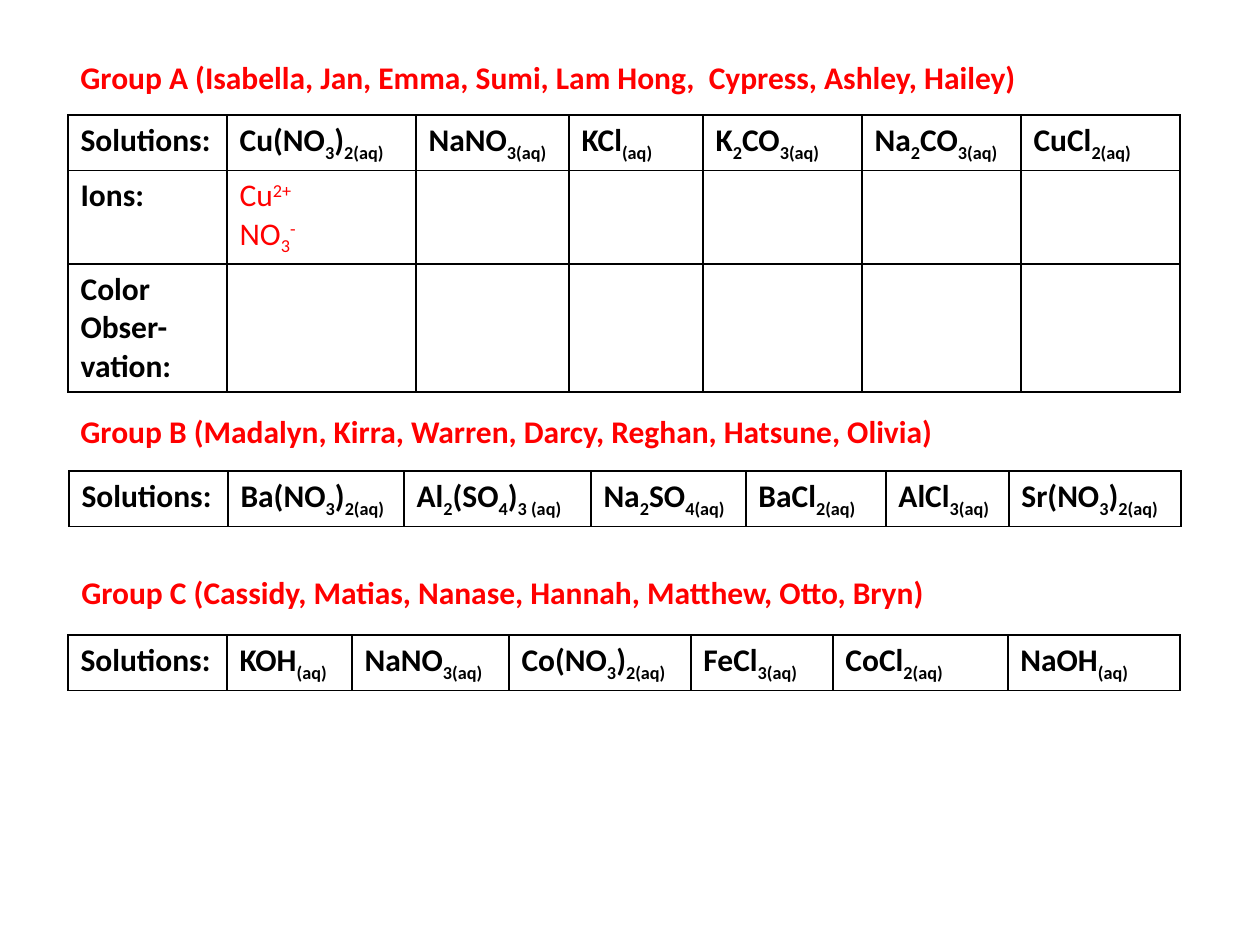
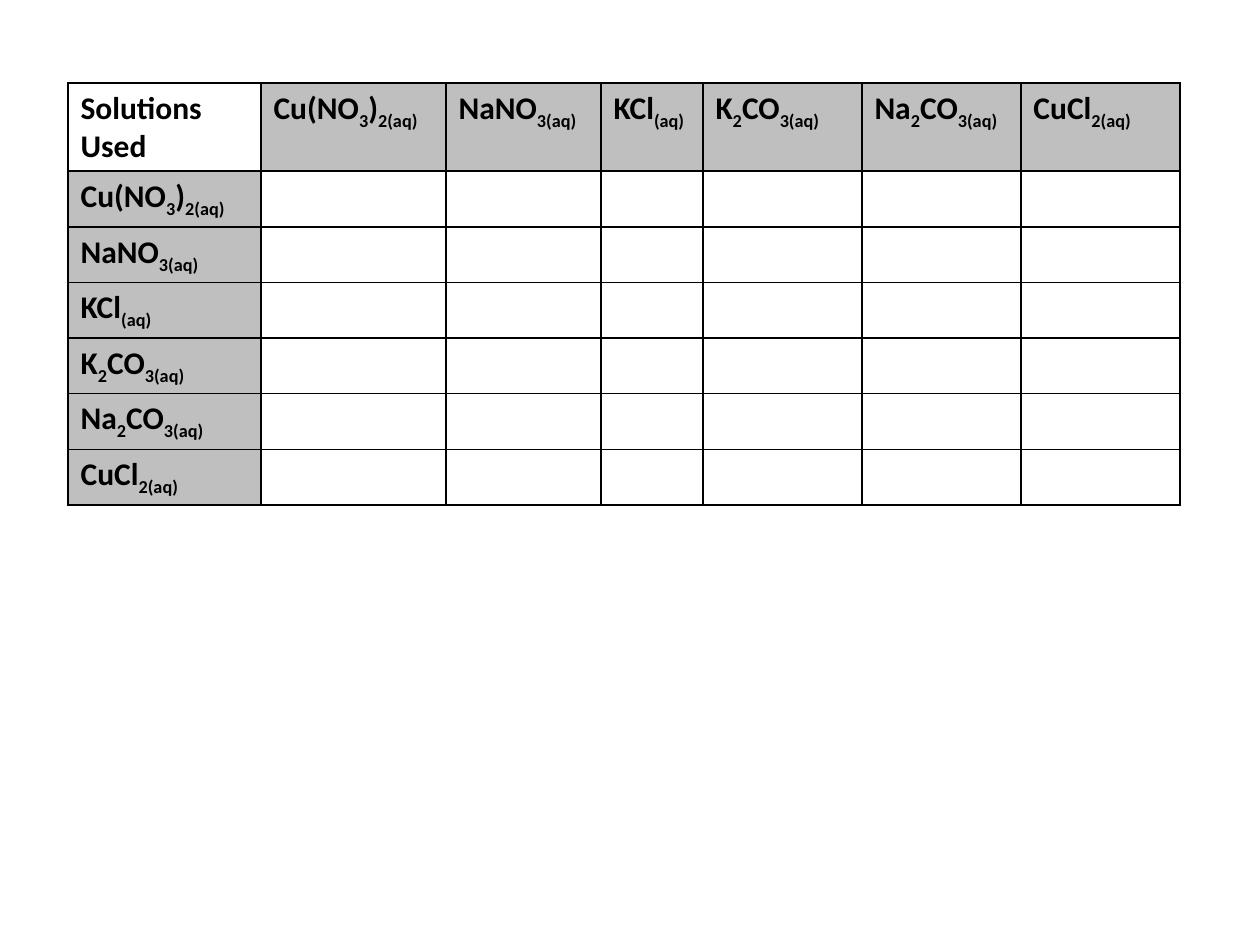
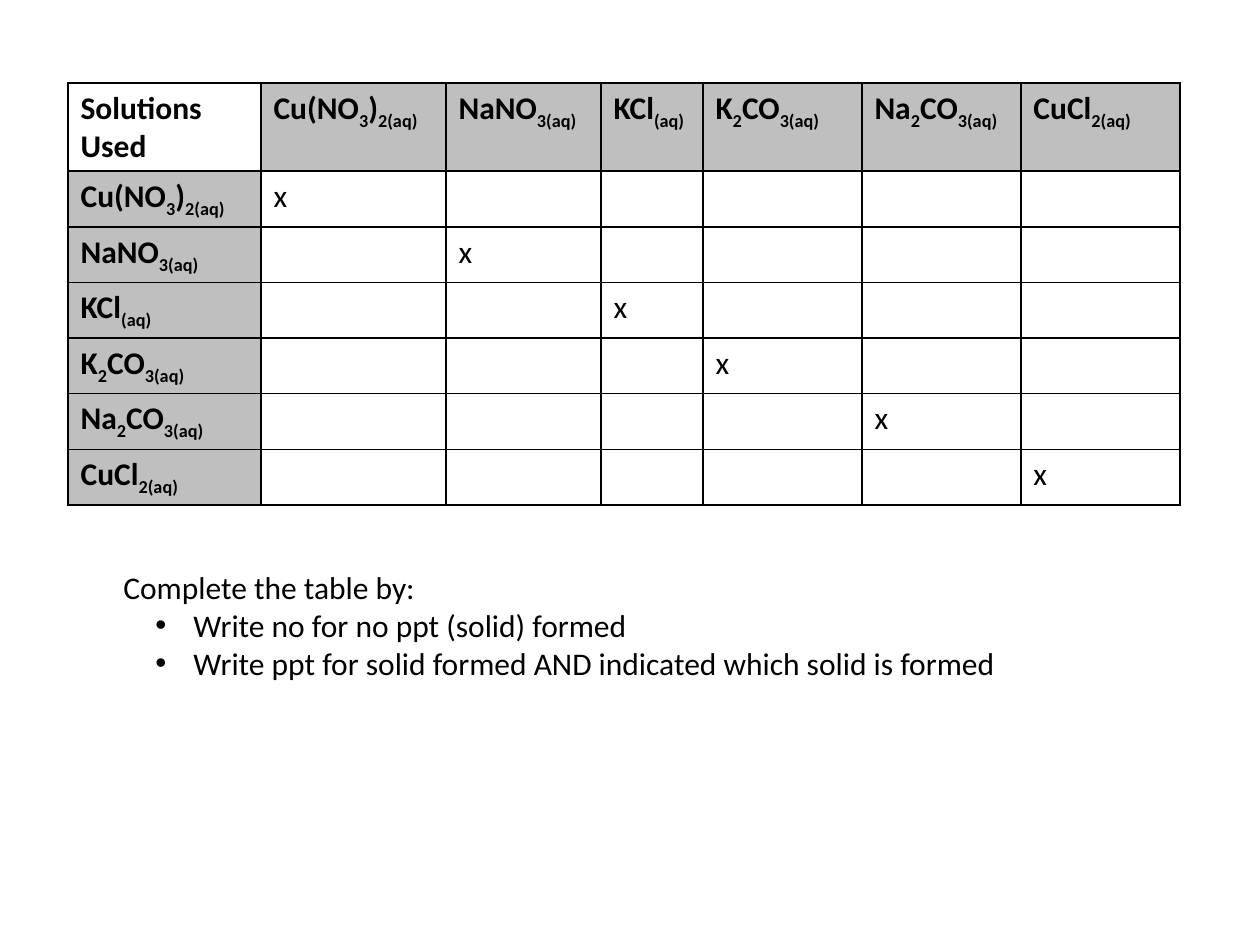
from dataclasses import dataclass

from lxml.etree import SubElement as Sub
from pptx import Presentation as Deck
from pptx.dml.color import RGBColor as Rgb
from pptx.enum.text import MSO_AUTO_SIZE as Fit
from pptx.oxml.ns import qn
from pptx.util import Emu, Pt

SCALE = 914400 / 126  # EMU in one px


def px(size):
    return Emu(round(size * SCALE))


@dataclass(frozen=True)
class Theme:
    face: str = "Calibri"
    size: int = 18
    ink: str = "000000"
    red: str = "FF0000"
    gray: str = "BFBFBF"
    white: str = "FFFFFF"
    rule: int = 1
    sub: int = -25
    sup: int = 30


class Page:
    """Holds the theme and the current slide."""

    def __init__(self, deck, theme):
        self.deck, self.theme, self.slide = deck, theme, None

    def new(self):
        self.slide = self.deck.slides.add_slide(self.deck.slide_layouts[6])

    def runs(self, para, text, color=None, bold=False):
        """Adds runs: _x_ is lowered, ^x^ is raised."""
        look = self.theme
        form = {"name": look.face, "size": Pt(look.size), "bold": bold}
        for low, part in enumerate(text.split("_")):
            for high, bit in enumerate(part.split("^")):
                if not bit:
                    continue
                run = para.add_run()
                run.text = bit
                for key, value in form.items():
                    setattr(run.font, key, value)
                run.font.color.rgb = Rgb.from_string(color or look.ink)
                shift = look.sup if high % 2 else look.sub if low % 2 else 0
                if shift:
                    run._r.get_or_add_rPr().set("baseline", str(shift * 1000))

    def fill(self, frame, text, **form):
        for num, line in enumerate(text.split("\n")):
            para = frame.add_paragraph() if num else frame.paragraphs[0]
            self.runs(para, line, **form)

    def text(self, box, text, **form):
        frame = self.slide.shapes.add_textbox(*map(px, box)).text_frame
        frame.word_wrap = True
        frame.auto_size = Fit.SHAPE_TO_FIT_TEXT
        self.fill(frame, text, **form)
        return frame

    def bullet(self, frame, text):
        para = frame.add_paragraph()
        para.level = 1
        props = para._p.get_or_add_pPr()
        for key, value in {"marL": px(63), "indent": px(-31)}.items():
            props.set(key, str(value))
        Sub(props, qn("a:buFont"), typeface="Arial")
        Sub(props, qn("a:buChar"), char="•")
        self.runs(para, text)

    def edge(self, cell):
        props = cell._tc.get_or_add_tcPr()
        for side in "LRTB":
            line = Sub(props, qn("a:ln" + side), w=str(Pt(self.theme.rule)))
            paint = Sub(line, qn("a:solidFill"))
            Sub(paint, qn("a:srgbClr"), val=self.theme.ink)

    def table(self, left, top, cols, rows, style):
        """Style gives each cell's back colour and text format."""
        high = 51
        box = map(px, (left, top, sum(cols), high * len(rows)))
        grid = self.slide.shapes.add_table(len(rows), len(cols), *box).table
        for key in ("first_row", "horz_banding"):
            setattr(grid, key, False)
        for col, wide in zip(grid.columns, cols):
            col.width = px(wide)
        for r, row in enumerate(rows):
            grid.rows[r].height = px(high)
            for c, text in enumerate(row):
                cell = grid.cell(r, c)
                back, form = style(r, c)
                self.edge(cell)
                cell.fill.solid()
                cell.fill.fore_color.rgb = Rgb.from_string(back)
                self.fill(cell.text_frame, text, **form)


# Shared content
LEFT = 68
SALTS = ["Cu(NO_3_)_2(aq)_", "NaNO_3(aq)_", "KCl_(aq)_",
         "K_2_CO_3(aq)_", "Na_2_CO_3(aq)_", "CuCl_2(aq)_"]
BLANK = [""] * len(SALTS)

# Heading, its box, table left and top, column widths, rows
GROUPS = [
    ("Group A (Isabella, Jan, Emma, Sumi, Lam Hong,  Cypress, Ashley, Hailey)",
     (LEFT, 52, 1114, 50), LEFT, 115,
     [159, 189, 153, 134, 159, 159, 159],
     [["Solutions:", *SALTS],
      ["Ions:", "Cu^2+^\nNO_3_^-^", *BLANK[1:]],
      ["Color Obser-vation:", *BLANK]]),
    ("Group B (Madalyn, Kirra, Warren, Darcy, Reghan, Hatsune, Olivia)",
     (LEFT, 406, 1114, 50), LEFT + 1, 471,
     [159, 176, 187, 155, 140, 123, 172],
     [["Solutions:", "Ba(NO_3_)_2(aq)_", "Al_2_(SO_4_)_3 (aq)_",
       "Na_2_SO_4(aq)_", "BaCl_2(aq)_", "AlCl_3(aq)_",
       "Sr(NO_3_)_2(aq)_"]]),
    ("Group C (Cassidy, Matias, Nanase, Hannah, Matthew, Otto, Bryn)",
     (LEFT + 1, 567, 1047, 50), LEFT, 635,
     [159, 125, 157, 182, 142, 175, 172],
     [["Solutions:", "KOH_(aq)_", "NaNO_3(aq)_", "Co(NO_3_)_2(aq)_",
       "FeCl_3(aq)_", "CoCl_2(aq)_", "NaOH_(aq)_"]]),
]


def groups(page):
    look = page.theme

    def style(r, c):
        head = r == 0 or c == 0
        return look.white, {"bold": head, "color": None if head else look.red}

    page.new()
    for name, box, left, top, cols, rows in GROUPS:
        page.table(left, top, cols, rows, style)
        page.text(box, name, color=look.red, bold=True)


def matrix(page, mark=""):
    """Every salt against every other, with a mark on the diagonal."""
    look = page.theme

    def style(r, c):
        back = look.gray if (r == 0) != (c == 0) else look.white
        return back, {"bold": r == 0 or c == 0}

    rows = [["Solutions Used", *SALTS]]
    for r, salt in enumerate(SALTS):
        rows.append([salt, *(mark if c == r else "" for c in range(len(SALTS)))])
    page.new()
    page.table(LEFT, 83, [193, 185, 155, 102, 159, 159, 159], rows, style)


def main():
    deck = Deck()
    deck.slide_width, deck.slide_height = px(1260), px(945)
    page = Page(deck, Theme())

    # Solutions for each group
    groups(page)

    # Empty results table
    matrix(page)

    # Marked results table with directions
    matrix(page, "x")
    frame = page.text((111, 562, 1048, 127), "Complete the table by:")
    for line in (" Write no for no ppt (solid) formed",
                 " Write ppt for solid formed AND indicated which solid is formed"):
        page.bullet(frame, line)

    deck.save("out.pptx")


if __name__ == "__main__":
    main()
